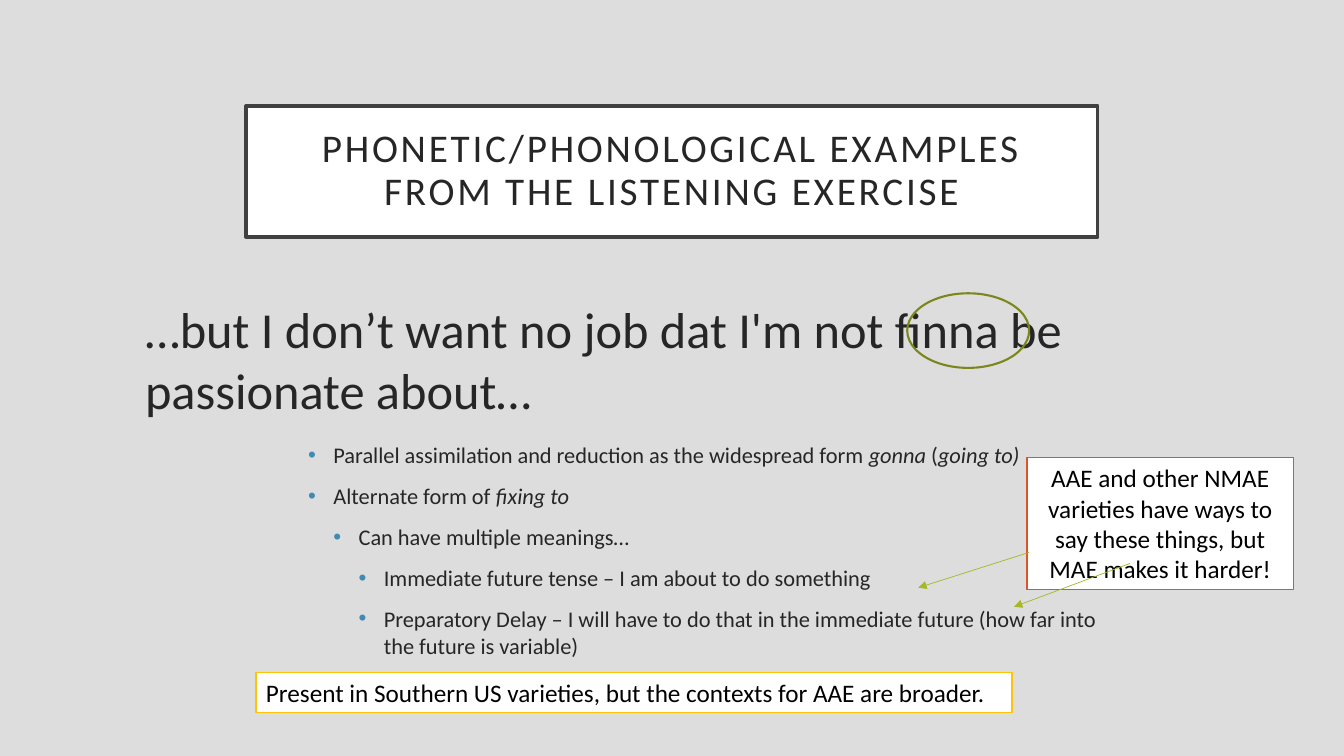
from dataclasses import dataclass, field
from typing import Optional

from lxml import etree
from pptx import Presentation
from pptx.dml.color import RGBColor
from pptx.enum.shapes import MSO_CONNECTOR, MSO_SHAPE
from pptx.enum.text import MSO_ANCHOR, PP_ALIGN
from pptx.oxml.ns import qn
from pptx.util import Inches, Pt

RECTANGLE, ELLIPSE = MSO_SHAPE.RECTANGLE, MSO_SHAPE.OVAL
STRAIGHT = MSO_CONNECTOR.STRAIGHT
LEFT, CENTER = PP_ALIGN.LEFT, PP_ALIGN.CENTER
TOP, MIDDLE = MSO_ANCHOR.TOP, MSO_ANCHOR.MIDDLE

# Grid: one column and one row are a tenth of an inch
CELL = 0.1
COLUMNS, ROWS = 133.33, 75
FONT = "Calibri"
DARK, BLACK, WHITE = "262626", "000000", "FFFFFF"
BULLET, BULLET_COLOUR, INDENT = "•", "418AB3", 2.5


@dataclass
class Line:
    """A paragraph; every second phrase of its text is italic."""
    phrases: list[str]
    level: int = 0
    space_before: float = 0


@dataclass
class Box:
    column: float
    row: float
    width: float
    height: float
    lines: list[Line] = field(default_factory=list)
    size: float = 18
    colour: str = BLACK
    geometry: Optional[MSO_SHAPE] = RECTANGLE
    fill: Optional[str] = WHITE
    outline: str = BLACK
    weight: float = 1
    align: PP_ALIGN = LEFT
    anchor: MSO_ANCHOR = TOP
    wrap: bool = True
    margin: Optional[float] = None
    line_spacing: float = 1.0
    letter_spacing: float = 0


@dataclass
class Arrow:
    start: tuple[float, float]
    end: tuple[float, float]


BOXES = [
    # Title
    Box(24.4, 10.5, 84.5, 13,
        [Line(["PHONETIC/PHONOLOGICAL EXAMPLES\nFROM THE LISTENING EXERCISE"])],
        size=28, colour=DARK, outline="404040", weight=2.5, align=CENTER,
        anchor=MIDDLE, margin=2, line_spacing=0.9, letter_spacing=2),
    # Explanation
    Box(27.1, 43.3, 85, 33.9, [
        Line(["Parallel assimilation and reduction as the widespread form ",
              "gonna", " (", "going to)"], 1),
        Line(["Alternate form of ", "fixing to"], 1, 10),
        Line(["Can have multiple meanings…"], 2, 10),
        Line(["Immediate future tense – I am about to do something"], 3, 10),
        Line(["Preparatory Delay – I will have to do that in the immediate "
              "future (how far into the future is variable)"], 3, 10),
    ], size=16, colour=DARK, geometry=None),
    # Quotation and the ring around its key word
    Box(13.4, 29.1, 112.5, 13,
        [Line(["…but I don’t want no job dat I'm not finna be passionate about…"])],
        size=36, colour=DARK, geometry=None),
    Box(90, 29.1, 12.1, 7.4, geometry=ELLIPSE, fill=None,
        outline="7B871D", weight=1.5),
    # Remarks
    Box(25.4, 66.7, 75, 4,
        [Line(["Present in Southern US varieties, but the contexts for AAE are broader."])],
        outline="FEC306", wrap=False),
    Box(101.9, 45.4, 26.4, 13.1,
        [Line(["AAE and other NMAE varieties have ways to say these things, "
               "but MAE makes it harder!"])],
        outline="DF5327", align=CENTER),
]

ARROWS = [Arrow((102.1, 54.8), (91.1, 58.3)), Arrow((112.1, 55.9), (100.6, 60.2))]
ARROW_COLOUR, ARROW_WEIGHT = "A6B727", 0.5


def cells(count: float) -> int:
    return Inches(count * CELL)


def paint(fill, colour: str) -> None:
    fill.solid()
    fill.fore_color.rgb = RGBColor.from_string(colour)


def set_values(target, values: dict) -> None:
    for name, value in values.items():
        setattr(target, name, value)


def add_bullet(paragraph, level: int) -> None:
    properties = paragraph._p.get_or_add_pPr()
    properties.set("marL", str(cells(INDENT * (level + 1))))
    properties.set("indent", str(-cells(INDENT)))
    colour = etree.SubElement(properties, qn("a:buClr"))
    etree.SubElement(colour, qn("a:srgbClr"), val=BULLET_COLOUR)
    etree.SubElement(properties, qn("a:buFont"), typeface="Arial")
    etree.SubElement(properties, qn("a:buChar"), char=BULLET)


def write_line(paragraph, line: Line, box: Box) -> None:
    if line.level:
        add_bullet(paragraph, line.level)
    set_values(paragraph, {"alignment": box.align, "level": line.level,
                           "line_spacing": box.line_spacing,
                           "space_before": Pt(line.space_before)})
    for index, phrase in enumerate(line.phrases):
        for row, text in enumerate(phrase.split("\n")):
            if row:
                paragraph.add_line_break()
            run = paragraph.add_run()
            run.text = text
            set_values(run.font, {"name": FONT, "size": Pt(box.size),
                                  "italic": index % 2 == 1})
            paint(run.font.fill, box.colour)
            if box.letter_spacing:
                run._r.get_or_add_rPr().set("spc", str(int(box.letter_spacing * 100)))


def add_box(slide, box: Box) -> None:
    place = [cells(n) for n in (box.column, box.row, box.width, box.height)]
    if box.geometry is None:
        shape = slide.shapes.add_textbox(*place)
    else:
        shape = slide.shapes.add_shape(box.geometry, *place)
        shape.shadow.inherit = False
        if box.fill:
            paint(shape.fill, box.fill)
        else:
            shape.fill.background()
        paint(shape.line.fill, box.outline)
        shape.line.width = Pt(box.weight)
    frame = shape.text_frame
    set_values(frame, {"word_wrap": box.wrap, "vertical_anchor": box.anchor})
    if box.margin is not None:
        sides = ("left", "top", "right", "bottom")
        set_values(frame, {f"margin_{side}": cells(box.margin) for side in sides})
    for index, line in enumerate(box.lines):
        paragraph = frame.add_paragraph() if index else frame.paragraphs[0]
        write_line(paragraph, line, box)


def add_arrow(slide, arrow: Arrow) -> None:
    ends = [cells(n) for n in arrow.start + arrow.end]
    connector = slide.shapes.add_connector(STRAIGHT, *ends)
    paint(connector.line.fill, ARROW_COLOUR)
    connector.line.width = Pt(ARROW_WEIGHT)
    properties = connector._element.spPr
    etree.SubElement(properties.find(qn("a:ln")), qn("a:tailEnd"), type="triangle")
    etree.SubElement(properties, qn("a:effectLst"))


def main() -> None:
    presentation = Presentation()
    set_values(presentation, {"slide_width": cells(COLUMNS),
                              "slide_height": cells(ROWS)})
    slide = presentation.slides.add_slide(presentation.slide_layouts[6])
    paint(slide.background.fill, "DDDDDD")
    for box in BOXES:
        add_box(slide, box)
    for arrow in ARROWS:
        add_arrow(slide, arrow)
    presentation.save("out.pptx")


if __name__ == "__main__":
    main()
